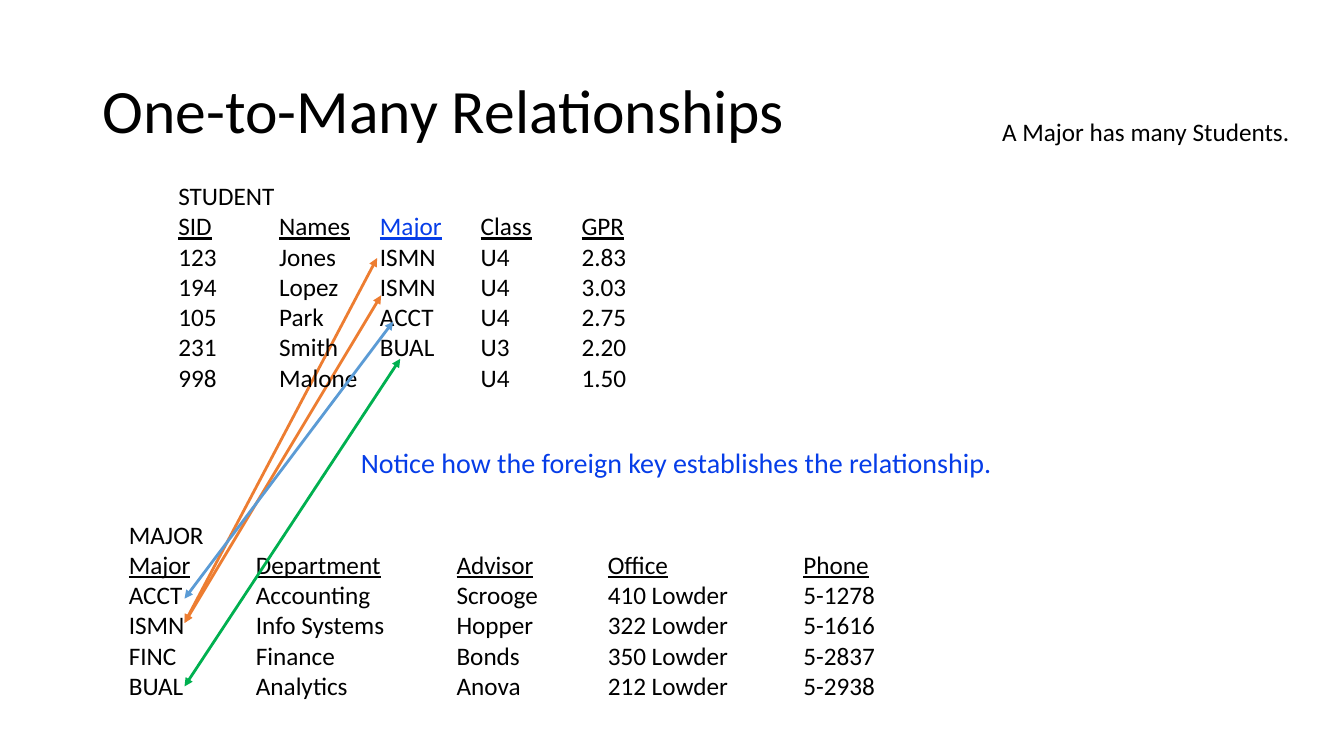
"""Build a slide on one-to-many relationships between two listings."""
from dataclasses import dataclass

from lxml import etree
from pptx import Presentation
from pptx import util as u
from pptx.dml.color import RGBColor
from pptx.enum import shapes, text
from pptx.oxml import ns


@dataclass(frozen=True)
class Theme:
    font: str = "Calibri"
    ink: str = "000000"
    key: str = "063DE8"
    orange: str = "ED7D31"
    green: str = "00B050"
    blue: str = "5B9BD5"
    title: int = 44
    note: int = 20
    body: int = 18
    line: int = 2


THEME = Theme()

STUDENTS = (
    ("123", "Jones", "ISMN", "U4", "2.83"),
    ("194", "Lopez", "ISMN", "U4", "3.03"),
    ("105", "Park", "ACCT", "U4", "2.75"),
    ("231", "Smith", "BUAL", "U3", "2.20"),
    ("998", "Malone", "", "U4", "1.50"),
)
MAJORS = (
    ("ACCT", "Accounting", "Scrooge", "410 Lowder", "5-1278"),
    ("ISMN", "Info Systems", "Hopper", "322 Lowder", "5-1616"),
    ("FINC", "Finance", "Bonds", "350 Lowder", "5-2837"),
    ("BUAL", "Analytics", "Anova", "212 Lowder", "5-2938"),
)
STUDENT_STOPS = (1, 2, 3, 4)
MAJOR_STOPS = (1.26, 3.25, 4.75, 6.69)


def add_span(para, words, size=THEME.body, colour=THEME.ink, underline=False):
    """Append formatted text to a paragraph."""
    span = para.add_run()
    span.text = words
    span.font.name = THEME.font
    span.font.size = u.Pt(size)
    span.font.color.rgb = RGBColor.from_string(colour)
    span.font.underline = underline


def add_box(page, left, top, width, height, wrap=True):
    """Add an empty text box and return it."""
    box = page.shapes.add_textbox(*map(u.Inches, (left, top, width, height)))
    box.text_frame.word_wrap = wrap
    box.text_frame.auto_size = text.MSO_AUTO_SIZE.SHAPE_TO_FIT_TEXT
    return box


def set_stops(para, stops):
    """Set left tab stops, given in inches."""
    tabs = etree.SubElement(para._p.get_or_add_pPr(), ns.qn("a:tabLst"))
    for stop in stops:
        etree.SubElement(tabs, ns.qn("a:tab"), pos=str(u.Inches(stop)), algn="l")


def add_listing(box, name, header, rows, stops):
    """Fill a box with a name, an underlined header and tabbed rows."""
    frame = box.text_frame
    add_span(frame.paragraphs[0], name)
    para = frame.add_paragraph()
    set_stops(para, stops)
    for words, colour in header:
        add_span(para, words, colour=colour, underline=True)
    for row in rows:
        para = frame.add_paragraph()
        set_stops(para, stops)
        add_span(para, "\t".join(row))


def add_link(page, start, end, colour):
    """Draw a line with an arrowhead at both ends."""
    link = page.shapes.add_connector(
        shapes.MSO_CONNECTOR.STRAIGHT, *map(u.Inches, (*start, *end)))
    link.line.color.rgb = RGBColor.from_string(colour)
    link.line.width = u.Pt(THEME.line)
    outline = link.line._get_or_add_ln()
    for tip in ("a:headEnd", "a:tailEnd"):
        etree.SubElement(outline, ns.qn(tip), type="triangle")
    etree.SubElement(link._element.spPr, ns.qn("a:effectLst"))


def add_title(page, words):
    """Place and format the title placeholder."""
    title = page.shapes.title
    title.left, title.top = u.Inches(0.92), u.Inches(0.4)
    title.width, title.height = u.Inches(11.5), u.Inches(1.45)
    frame = title.text_frame
    frame.auto_size = text.MSO_AUTO_SIZE.NONE
    frame.vertical_anchor = text.MSO_ANCHOR.MIDDLE
    para = frame.paragraphs[0]
    para.alignment = text.PP_ALIGN.LEFT
    para.line_spacing = 0.9
    add_span(para, words, size=THEME.title)


def main():
    """Build and save the deck."""
    deck = Presentation()
    deck.slide_width, deck.slide_height = u.Inches(13.33), u.Inches(7.5)
    page = deck.slides.add_slide(deck.slide_layouts.get_by_name("Title Only"))
    add_title(page, "One-to-Many Relationships")

    major_box = add_box(page, 1.18, 5.1, 7.67, 1.92, wrap=False)
    major_header = [("Major\tDepartment\tAdvisor\tOffice\tPhone", THEME.ink)]
    add_listing(major_box, "MAJOR", major_header, MAJORS, MAJOR_STOPS)

    add_link(page, (1.83, 6.18), (3.74, 2.56), THEME.orange)
    add_link(page, (1.83, 6.18), (3.78, 2.93), THEME.orange)
    add_link(page, (1.83, 6.81), (3.97, 3.56), THEME.green)

    note = add_box(page, 3.48, 4.37, 7.14, 0.43)
    add_span(note.text_frame.paragraphs[0],
             "Notice how the foreign key establishes the relationship.",
             size=THEME.note, colour=THEME.key)
    rule = add_box(page, 9.84, 1.11, 3.08, 0.4, wrap=False)
    add_span(rule.text_frame.paragraphs[0], "A Major has many Students.")

    student_box = add_box(page, 1.67, 1.74, 5, 2.52)
    student_header = [("SID\tNames\t", THEME.ink), ("Major", THEME.key),
                      ("\tClass\tGPR", THEME.ink)]
    add_listing(student_box, "STUDENT", student_header, STUDENTS, STUDENT_STOPS)
    add_link(page, (1.83, 5.94), (3.9, 3.19), THEME.blue)

    deck.save("out.pptx")


if __name__ == "__main__":
    main()
